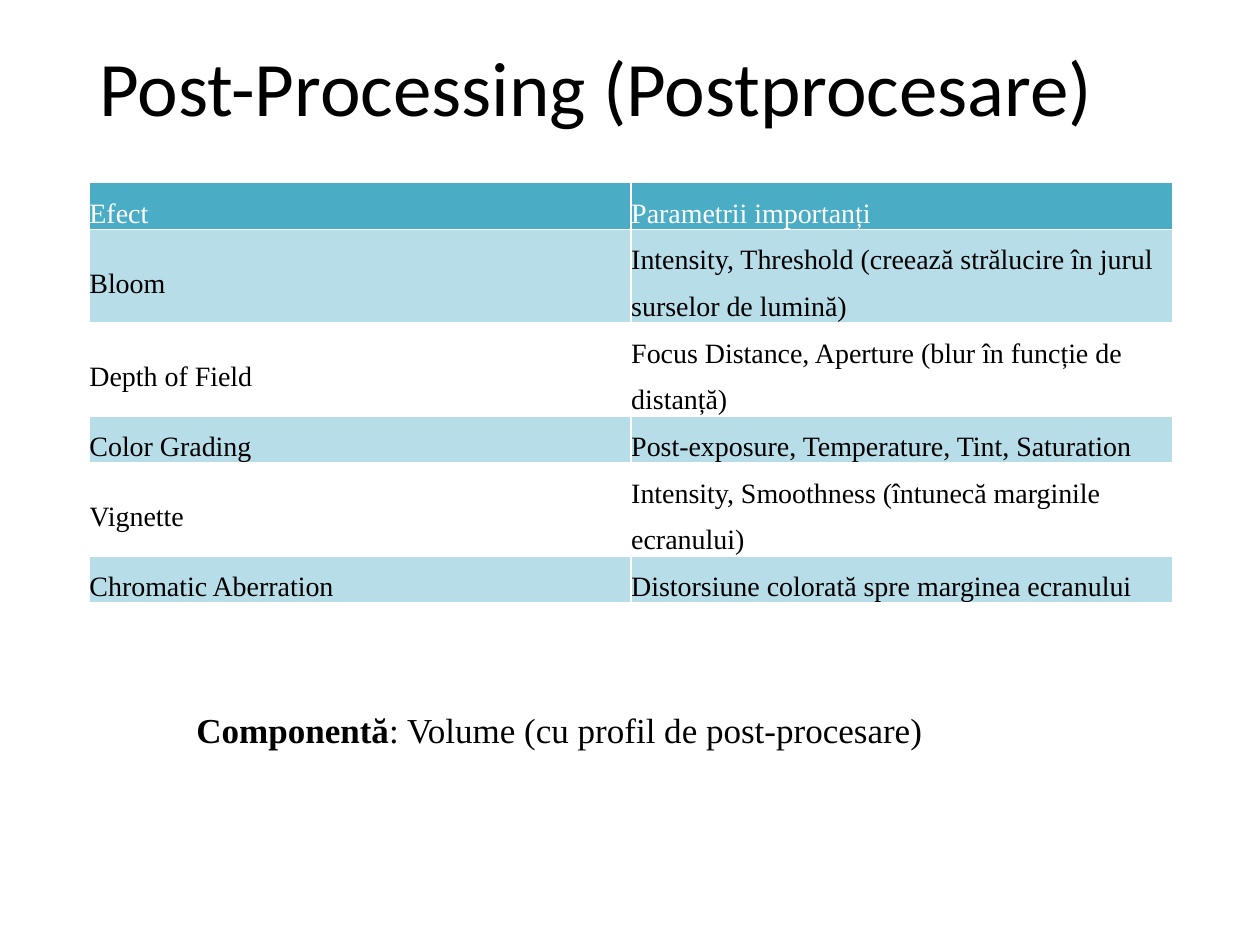
from pptx import Presentation
from pptx.dml.color import RGBColor
from pptx.enum import text as tx
from pptx.util import Inches, Pt

TITLE = "Post-Processing (Postprocesare)"
ROWS = [  # effect, parameters, lines of text
    ("Efect", "Parametrii importanți", 1),
    ("Bloom", "Intensity, Threshold (creează strălucire în jurul surselor de lumină)", 2),
    ("Depth of Field", "Focus Distance, Aperture (blur în funcție de distanță)", 2),
    ("Color Grading", "Post-exposure, Temperature, Tint, Saturation", 1),
    ("Vignette", "Intensity, Smoothness (întunecă marginile ecranului)", 2),
    ("Chromatic Aberration", "Distorsiune colorată spre marginea ecranului", 1),
]
NOTE = [("Componentă", True), (": Volume (cu profil de post-procesare)", False)]

THEME = {
    "head": "4BACC6", "band": "B7DDE8", "plain": "FFFFFF",
    "title": {"size": Pt(44), "name": "Calibri", "color": "000000"},
    "label": {"size": Pt(16), "name": "Times New Roman", "color": "FFFFFF", "bold": False},
    "cell": {"size": Pt(16), "name": "Times New Roman", "color": "000000", "bold": False},
    "note": {"size": Pt(20), "name": "Times New Roman", "color": "000000"},
}
TITLE_BOX = (0.69, 0, 8.62, 1.45)
NOTE_BOX = (1.46, 5.41, 7.26, 0.6)
LEFT, TOP, COL, LINE = 0.71, 1.45, 4.3, 0.37


def write(para, runs, style, gap):
    """Fill a paragraph with (words, bold) runs in a theme style."""
    para.line_spacing = gap
    para.alignment = tx.PP_ALIGN.LEFT
    for words, bold in runs:
        run = para.add_run()
        run.text = words
        for key, val in {**THEME[style], "bold": bold}.items():
            if key == "color":
                run.font.color.rgb = RGBColor.from_string(val)
            else:
                setattr(run.font, key, val)


def add_title(slide):
    title = slide.shapes.title
    for key, val in zip(("left", "top", "width", "height"), TITLE_BOX):
        setattr(title, key, Inches(val))
    frame = title.text_frame
    frame.vertical_anchor = tx.MSO_ANCHOR.MIDDLE
    write(frame.paragraphs[0], [(TITLE, False)], "title", 0.9)


def add_effects(slide):
    high = LINE * sum(row[-1] for row in ROWS)
    table = slide.shapes.add_table(len(ROWS), 2, *map(Inches, (LEFT, TOP, 2 * COL, high))).table
    for col in table.columns:
        col.width = Inches(COL)
    form = {f"margin_{side}": 0 for side in ("left", "right", "top", "bottom")}
    form["vertical_anchor"] = tx.MSO_ANCHOR.MIDDLE
    for r, (*words, lines) in enumerate(ROWS):
        table.rows[r].height = Inches(LINE * lines)
        fill = "head" if r == 0 else "band" if r % 2 else "plain"
        for c, word in enumerate(words):
            cell = table.cell(r, c)
            for key, val in form.items():
                setattr(cell, key, val)
            cell.fill.solid()
            cell.fill.fore_color.rgb = RGBColor.from_string(THEME[fill])
            style = "cell" if r else "label"
            write(cell.text_frame.paragraphs[0], [(word, False)], style, 1.5)


def add_note(slide):
    frame = slide.shapes.add_textbox(*map(Inches, NOTE_BOX)).text_frame
    frame.word_wrap = True
    frame.auto_size = tx.MSO_AUTO_SIZE.SHAPE_TO_FIT_TEXT
    write(frame.paragraphs[0], NOTE, "note", 1.5)


def main():
    deck = Presentation()
    deck.slide_width, deck.slide_height = Inches(10), Inches(7.5)
    slide = deck.slides.add_slide(deck.slide_layouts[5])
    for add in (add_title, add_effects, add_note):
        add(slide)
    deck.save("out.pptx")


if __name__ == "__main__":
    main()
